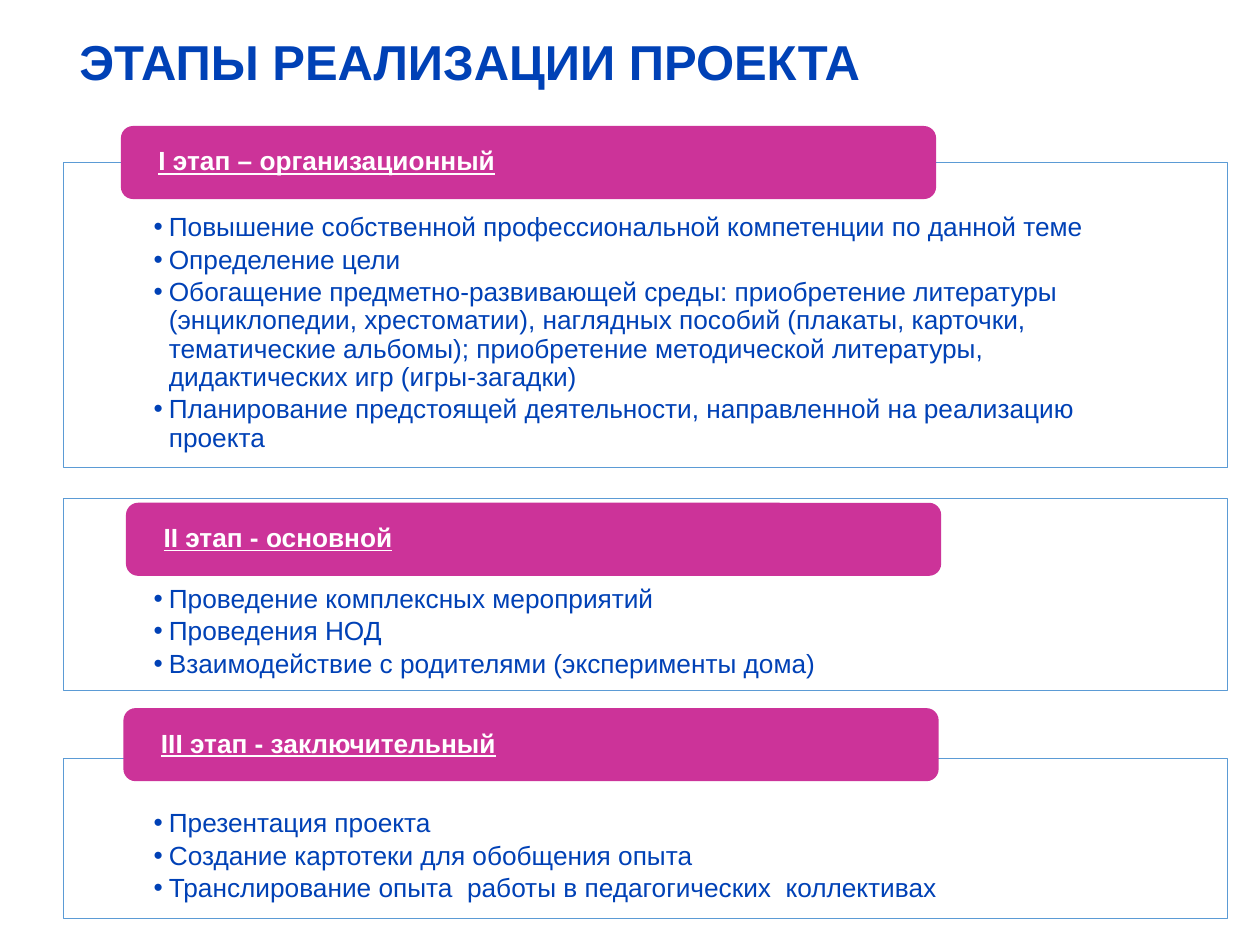
import pptx
import pptx.util
import pptx.dml.color
import pptx.enum.shapes
import pptx.enum.text
from lxml import etree
from pptx.util import Inches

COLORS = {"text": "0041B6", "header": "CC3399", "border": "5B9BD5", "white": "FFFFFF"}
FONT = "Arial"
HEADER_SIZE = (6.47, 0.58)
PANEL_LEFT, PANEL_WIDTH = 0.5, 9.24

STAGES = [
    {
        "heading": "I этап – организационный",
        "header_at": (0.96, 1),
        "panel_top": 1.29,
        "panel_height": 2.42,
        "inset_top": 0.41,
        "tasks": [
            "Повышение собственной профессиональной компетенции по данной теме",
            "Определение цели",
            "Обогащение предметно-развивающей среды: приобретение литературы "
            "(энциклопедии, хрестоматии), наглядных пособий (плакаты, карточки, "
            "тематические альбомы); приобретение методической литературы, "
            "дидактических игр (игры-загадки)",
            "Планирование предстоящей деятельности, направленной на реализацию проекта",
        ],
    },
    {
        "heading": "II этап - основной",
        "header_at": (1, 3.99),
        "panel_top": 3.96,
        "panel_height": 1.52,
        "inset_top": 0.69,
        "tasks": [
            "Проведение комплексных мероприятий",
            "Проведения НОД",
            "Взаимодействие с родителями (эксперименты дома)",
        ],
    },
    {
        "heading": "III этап - заключительный",
        "header_at": (0.98, 5.62),
        "panel_top": 6.02,
        "panel_height": 1.27,
        "inset_top": 0.41,
        "tasks": [
            "Презентация проекта",
            "Создание картотеки для обобщения опыта",
            "Транслирование опыта  работы в педагогических  коллективах",
        ],
    },
]


def rgb(name):
    return pptx.dml.color.RGBColor.from_string(COLORS[name])


def fill_with(shape, color):
    shape.fill.solid()
    shape.fill.fore_color.rgb = rgb(color)


def place(shape, left, top, width, height):
    shape.left, shape.top = Inches(left), Inches(top)
    shape.width, shape.height = Inches(width), Inches(height)


def set_frame(frame, anchor, insets):
    frame.word_wrap = True
    frame.auto_size = pptx.enum.text.MSO_AUTO_SIZE.NONE
    frame.vertical_anchor = anchor
    frame.margin_left, frame.margin_top, frame.margin_right, frame.margin_bottom = map(
        Inches, insets
    )


def format_paragraph(paragraph, size, color, bold=False, underline=None):
    paragraph.alignment = pptx.enum.text.PP_ALIGN.LEFT
    paragraph.line_spacing = 0.9
    paragraph.space_before = pptx.util.Pt(0)
    for run in paragraph.runs:
        run.font.name = FONT
        run.font.size = pptx.util.Pt(size)
        run.font.bold = bold
        run.font.underline = underline
        run.font.color.rgb = rgb(color)


def add_bullet(paragraph):
    properties = paragraph._p.get_or_add_pPr()
    properties.set("marL", str(Inches(0.12)))
    properties.set("indent", str(Inches(-0.12)))
    namespace = properties.nsmap["a"]
    etree.SubElement(properties, f"{{{namespace}}}buFont", typeface=FONT)
    etree.SubElement(properties, f"{{{namespace}}}buChar", char="•")


def fill_title(title):
    place(title, 0.53, 0.04, 8.61, 0.95)
    fill_with(title, "white")
    title.text_frame.text = "ЭТАПЫ РЕАЛИЗАЦИИ ПРОЕКТА"
    set_frame(title.text_frame, pptx.enum.text.MSO_ANCHOR.MIDDLE, (0.1, 0.05, 0.1, 0.05))
    format_paragraph(title.text_frame.paragraphs[0], 28, "text", bold=True)


def fill_panel(panel, stage):
    place(panel, PANEL_LEFT, stage["panel_top"], PANEL_WIDTH, stage["panel_height"])
    fill_with(panel, "white")
    panel.line.color.rgb = rgb("border")
    panel.line.width = pptx.util.Pt(0.5)
    frame = panel.text_frame
    frame.text = "\n".join(stage["tasks"])
    set_frame(frame, pptx.enum.text.MSO_ANCHOR.TOP, (0.72, stage["inset_top"], 0.72, 0.12))
    for task in frame.paragraphs:
        add_bullet(task)
        format_paragraph(task, 15, "text")
        task.space_after = pptx.util.Pt(2.25)


def add_header(slide, stage):
    header = slide.shapes.add_shape(
        pptx.enum.shapes.MSO_SHAPE.ROUNDED_RECTANGLE,
        *map(Inches, stage["header_at"] + HEADER_SIZE),
    )
    header.shadow.inherit = False
    fill_with(header, "header")
    header.line.fill.background()
    header.text_frame.text = stage["heading"]
    set_frame(header.text_frame, pptx.enum.text.MSO_ANCHOR.MIDDLE, (0.27, 0, 0.27, 0))
    format_paragraph(
        header.text_frame.paragraphs[0], 15, "white", bold=True, underline=True
    )


def main():
    presentation = pptx.Presentation()
    presentation.slide_width, presentation.slide_height = Inches(10), Inches(7.5)
    slide = presentation.slides.add_slide(
        presentation.slide_layouts.get_by_name("Comparison")
    )
    title, *panels, spare = slide.placeholders
    spare.element.getparent().remove(spare.element)
    fill_title(title)
    for panel, stage in zip(panels, STAGES):
        fill_panel(panel, stage)
        add_header(slide, stage)
    presentation.save("out.pptx")


if __name__ == "__main__":
    main()
